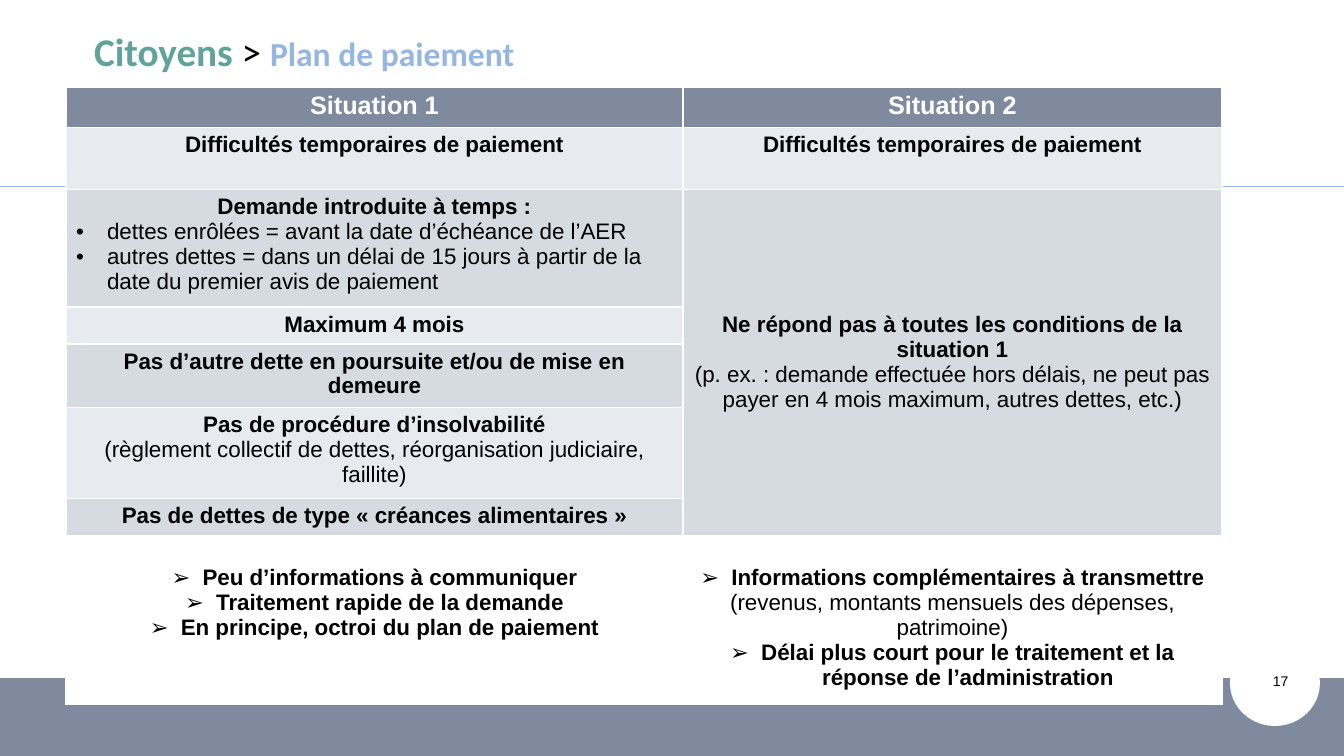
"""Build the slide comparing the two payment plan situations for citizens."""
from lxml.etree import SubElement
from pptx import Presentation
from pptx.dml.color import RGBColor
from pptx.enum.shapes import MSO_CONNECTOR as CONNECTOR, MSO_SHAPE as SHAPE
from pptx.enum.text import MSO_ANCHOR as ANCHOR, MSO_AUTO_SIZE as AUTO_SIZE, PP_ALIGN as ALIGN
from pptx.oxml.ns import qn
from pptx.util import Pt

EMU_PER_PX = 914400 / 100.8
COLORS = {
    "slate": "7F8A9F", "pale": "E7EAEE", "grey": "D6DBE1", "white": "FFFFFF",
    "black": "000000", "green": "61A39A", "blue": "96B6E2",
}


def px(*lengths):
    return [round(length * EMU_PER_PX) for length in lengths]


def add_run(paragraph, text, size, color, bold=False, name="Arial"):
    run = paragraph.add_run()
    run.text = text
    for attribute, value in {"size": Pt(size), "bold": bold, "name": name}.items():
        setattr(run.font, attribute, value)
    run.font.color.rgb = RGBColor.from_string(COLORS[color])


presentation = Presentation()
presentation.slide_width, presentation.slide_height = px(1344, 756)
slide = presentation.slides.add_slide(presentation.slide_layouts[5])

for kind, box, color in [
    (SHAPE.RECTANGLE, (0, 678, 1344, 78), "slate"),
    (SHAPE.OVAL, (1230, 640, 90, 86), "white"),
]:
    shape = slide.shapes.add_shape(kind, *px(*box))
    shape.shadow.inherit = False
    shape.fill.solid()
    shape.fill.fore_color.rgb = RGBColor.from_string(COLORS[color])
    shape.line.fill.background()

rule = slide.shapes.add_connector(CONNECTOR.STRAIGHT, *px(0, 186, 1344, 186))
rule.line.color.rgb = RGBColor.from_string(COLORS["blue"])
rule.line.width = Pt(0.5)
SubElement(rule._element.spPr, qn("a:effectLst"))

page_number = slide.shapes.add_textbox(*px(1263, 668, 52, 40))
page_number.text_frame.word_wrap = True
add_run(page_number.text_frame.paragraphs[0], "17", 10, "black")

title = slide.shapes.title
title.left, title.top, title.width, title.height = px(84, 22, 542, 58)
for attribute, value in {
    "word_wrap": True, "auto_size": AUTO_SIZE.NONE, "vertical_anchor": ANCHOR.MIDDLE,
}.items():
    setattr(title.text_frame, attribute, value)
title_paragraph = title.text_frame.paragraphs[0]
title_paragraph.alignment = ALIGN.LEFT
for text, size, color, bold in [
    ("Citoyens", 28, "green", True),
    (" > ", 28, "black", False),
    ("Plan de paiement", 24, "blue", True),
]:
    add_run(title_paragraph, text, size, color, bold, "Calibri")

COLUMN_WIDTHS = [617, 539]
ROW_HEIGHTS = [39, 62, 113, 35, 62, 87, 36, 165]
ROW_FILLS = ["slate", "pale", "grey", "pale", "grey", "pale", "grey", "white"]
LAST_ROW = len(ROW_HEIGHTS) - 1
DIFFICULTIES = [("Difficultés temporaires de paiement", True, "")]
SITUATIONS = [
    {
        0: [("Situation 1", True, "")],
        1: DIFFICULTIES,
        2: [
            ("Demande introduite à temps :", True, ""),
            ("dettes enrôlées = avant la date d’échéance de l’AER", False, "•"),
            ("autres dettes = dans un délai de 15 jours à partir de la date du premier avis "
             "de paiement", False, "•"),
        ],
        3: [("Maximum 4 mois", True, "")],
        4: [("Pas d’autre dette en poursuite et/ou de mise en demeure", True, "")],
        5: [
            ("Pas de procédure d’insolvabilité", True, ""),
            ("(règlement collectif de dettes, réorganisation judiciaire, faillite)", False, ""),
        ],
        6: [("Pas de dettes de type « créances alimentaires »", True, "")],
        7: [
            ("Peu d’informations à communiquer", True, "➢"),
            ("Traitement rapide de la demande", True, "➢"),
            ("En principe, octroi du plan de paiement", True, "➢"),
        ],
    },
    {
        0: [("Situation 2", True, "")],
        1: DIFFICULTIES,
        2: [
            ("Ne répond pas à toutes les conditions de la situation 1", True, ""),
            ("(p. ex. : demande effectuée hors délais, ne peut pas payer en 4 mois maximum, "
             "autres dettes, etc.)", False, ""),
        ],
        7: [
            ("Informations complémentaires à transmettre", True, "➢"),
            ("(revenus, montants mensuels des dépenses, patrimoine)", False, ""),
            ("Délai plus court pour le traitement et la réponse de l’administration", True, "➢"),
        ],
    },
]

table = slide.shapes.add_table(
    len(ROW_HEIGHTS), len(COLUMN_WIDTHS),
    *px(66, 87, sum(COLUMN_WIDTHS), sum(ROW_HEIGHTS)),
).table
for column, width in zip(table.columns, px(*COLUMN_WIDTHS)):
    column.width = width
for row, height in zip(table.rows, px(*ROW_HEIGHTS)):
    row.height = height
table.cell(2, 1).merge(table.cell(6, 1))
table.cell(2, 1).vertical_anchor = ANCHOR.MIDDLE

for column_index, situation in enumerate(SITUATIONS):
    for row_index, color in enumerate(ROW_FILLS):
        cell = table.cell(row_index, column_index)
        cell.fill.solid()
        cell.fill.fore_color.rgb = RGBColor.from_string(COLORS[color])
        size, text_color = (18, "white") if row_index == 0 else (16, "black")
        if row_index == LAST_ROW:
            cell.margin_top = px(30)[0]
        for index, (text, bold, bullet) in enumerate(situation.get(row_index, [])):
            frame = cell.text_frame
            paragraph = frame.add_paragraph() if index else frame.paragraphs[0]
            paragraph.alignment = ALIGN.LEFT if bullet == "•" else ALIGN.CENTER
            if bullet:
                properties = paragraph._p.get_or_add_pPr()
                indent = px(31)[0]
                properties.set("marL", str(indent))
                properties.set("indent", str(-indent))
                SubElement(properties, qn("a:buFont"), typeface="Arial")
                SubElement(properties, qn("a:buChar"), char=bullet)
            add_run(paragraph, text, size, text_color, bold)

presentation.save("out.pptx")
